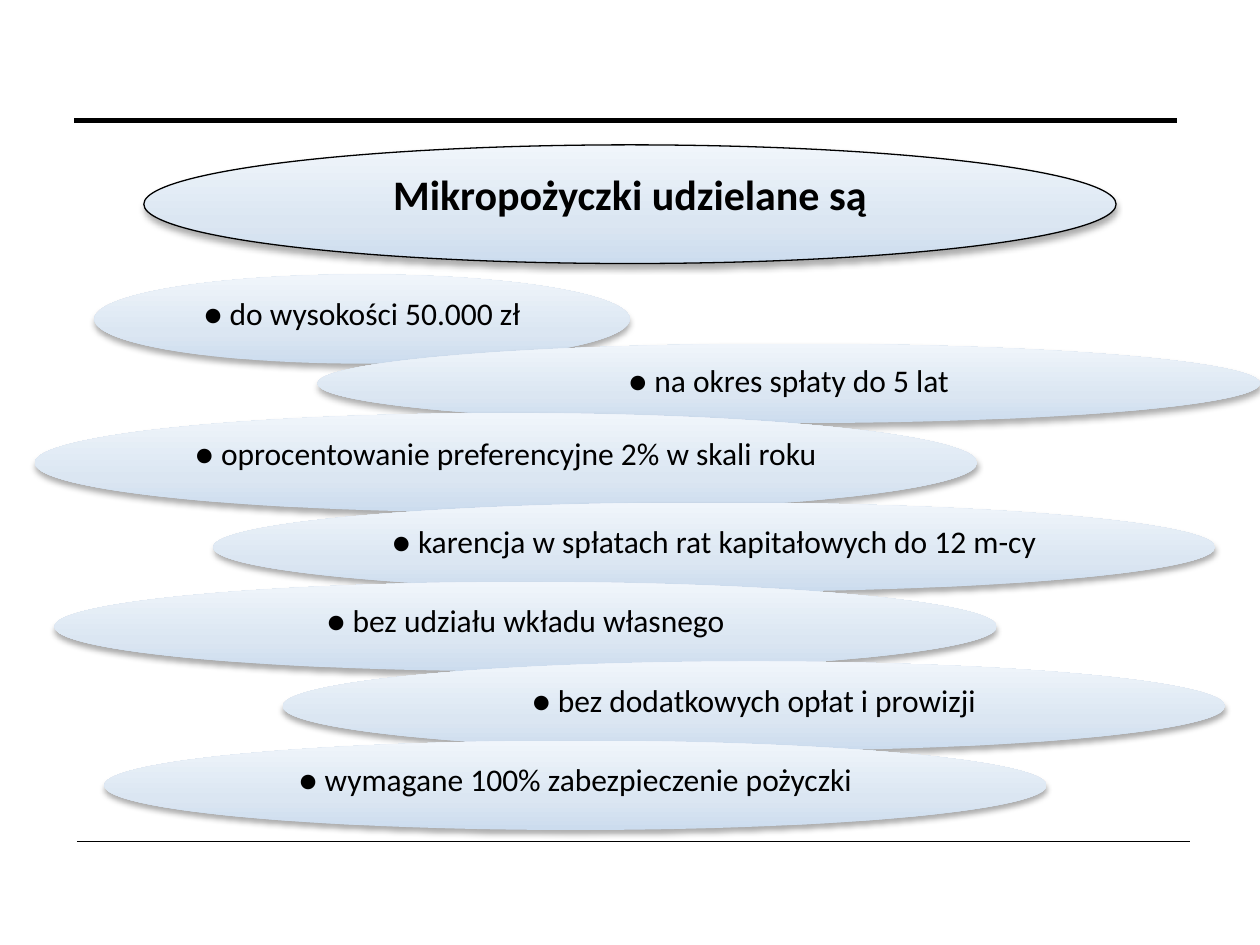
from copy import deepcopy

from lxml.etree import SubElement
from pptx import Presentation
from pptx.dml.color import RGBColor
from pptx.enum.shapes import MSO_CONNECTOR, MSO_SHAPE
from pptx.enum.text import MSO_ANCHOR, PP_ALIGN
from pptx.oxml.ns import qn
from pptx.util import Pt

BLACK = "000000"
GRADIENT = [(0, "CCDCEE"), (0.35, "DBE6F2"), (1, "F0F5FB")]

# left, top, right, width of line
RULES = [(44, 481, 680, 0.25), (42.5, 69, 672.5, 3)]

# text, left, top, width, height
TITLE = ("Mikropożyczki udzielane są", 82.2, 82.8, 555.6, 67.8)
TERMS = [
    ("do wysokości 50.000 zł", 53.9, 156.8, 306, 51),
    ("na okres spłaty do 5 lat", 181.4, 196.4, 538.6, 45.4),
    ("oprocentowanie preferencyjne 2% w skali roku", 19.8, 236.1, 538.6, 56.7),
    ("karencja w spłatach rat kapitałowych do 12 m-cy", 121.8, 287.2, 572.6, 51),
    ("bez udziału wkładu własnego", 31, 332.6, 538.6, 51),
    ("bez dodatkowych opłat i prowizji", 161.5, 378, 538.6, 51),
    ("wymagane 100% zabezpieczenie pożyczki", 59.5, 423.3, 538.6, 51),
]


def color(value):
    return RGBColor.from_string(value)


def add_rule(slide, left, top, right, width):
    rule = slide.shapes.add_connector(
        MSO_CONNECTOR.STRAIGHT, Pt(left), Pt(top), Pt(right), Pt(top))
    rule.line.color.rgb = color(BLACK)
    rule.line.width = Pt(width)
    SubElement(rule._element.spPr, qn("a:effectLst"))


def fill_gradient(shape):
    """Fill with the three-stop gradient, darkest at the bottom."""
    fill = shape.fill
    fill.gradient()
    fill.gradient_angle = 90
    stop_list = shape._element.spPr.find(".//" + qn("a:gsLst"))
    stop_list.append(deepcopy(stop_list[0]))
    for stop, (position, value) in zip(fill.gradient_stops, GRADIENT):
        stop.position = position
        stop.color.rgb = color(value)


def add_shadow(shape):
    shape.shadow.inherit = False
    effects = shape._element.spPr.find(qn("a:effectLst"))
    shadow = SubElement(effects, qn("a:outerShdw"), blurRad=str(Pt(3.5)),
                        dist=str(Pt(2.2)), dir="5400000", rotWithShape="0")
    shade = SubElement(shadow, qn("a:srgbClr"), val=BLACK)
    SubElement(shade, qn("a:alpha"), val="32000")


def add_oval(slide, kind, text, box, size, bold=False):
    shape = slide.shapes.add_shape(kind, *map(Pt, box))
    fill_gradient(shape)
    shape.line.fill.background()
    add_shadow(shape)
    frame = shape.text_frame
    frame.word_wrap = True
    frame.vertical_anchor = MSO_ANCHOR.TOP
    paragraph = frame.paragraphs[0]
    paragraph.text = text
    paragraph.alignment = PP_ALIGN.CENTER
    font = paragraph.font
    font.name, font.size, font.bold = "Calibri", Pt(size), bold
    font.color.rgb = color(BLACK)
    return shape


def add_term(slide, text, *box):
    add_oval(slide, MSO_SHAPE.OVAL, "● " + text, box, 18)


def main():
    presentation = Presentation()
    presentation.slide_width, presentation.slide_height = Pt(720), Pt(540)
    slide = presentation.slides.add_slide(presentation.slide_layouts[6])

    for rule in RULES:
        add_rule(slide, *rule)
    for term in TERMS:
        add_term(slide, *term)

    text, *box = TITLE
    title = add_oval(slide, MSO_SHAPE.FLOWCHART_CONNECTOR, text, box, 24, bold=True)
    title.line.color.rgb = color(BLACK)
    title.line.width = Pt(0.75)

    presentation.save("out.pptx")


if __name__ == "__main__":
    main()
